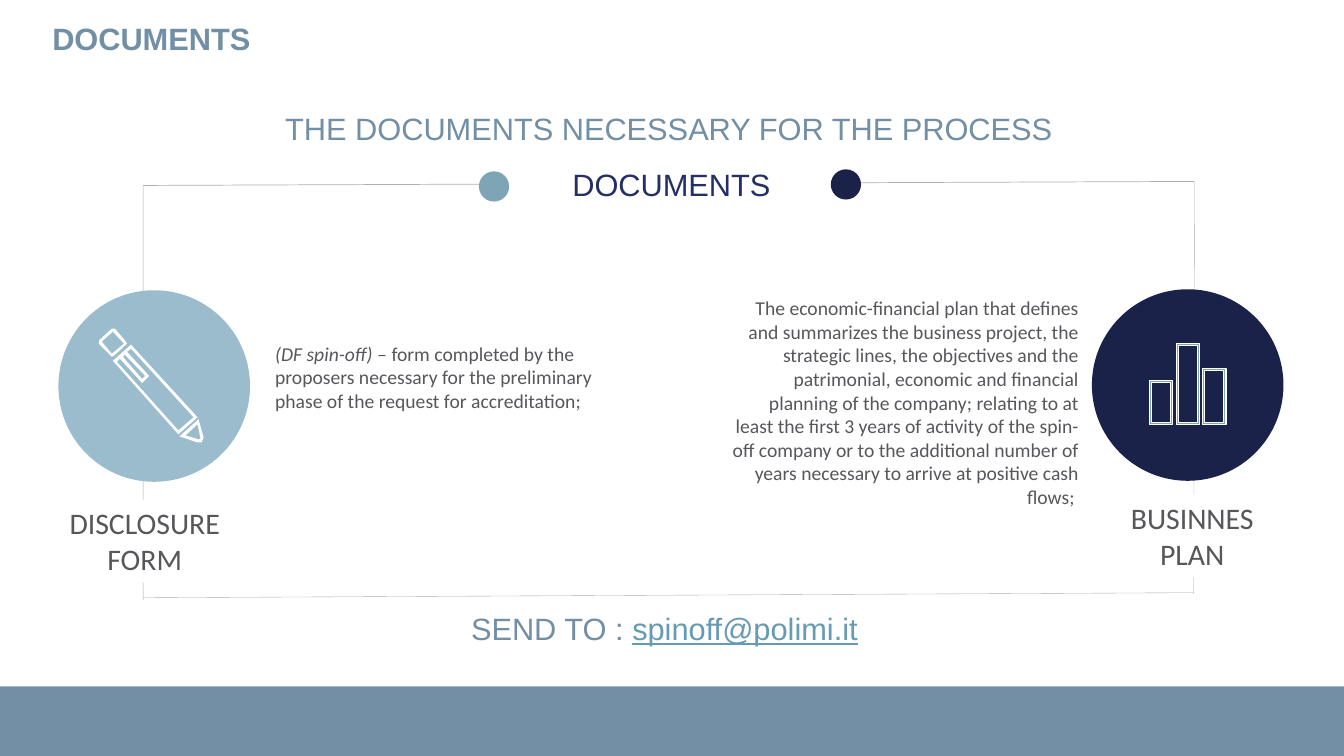
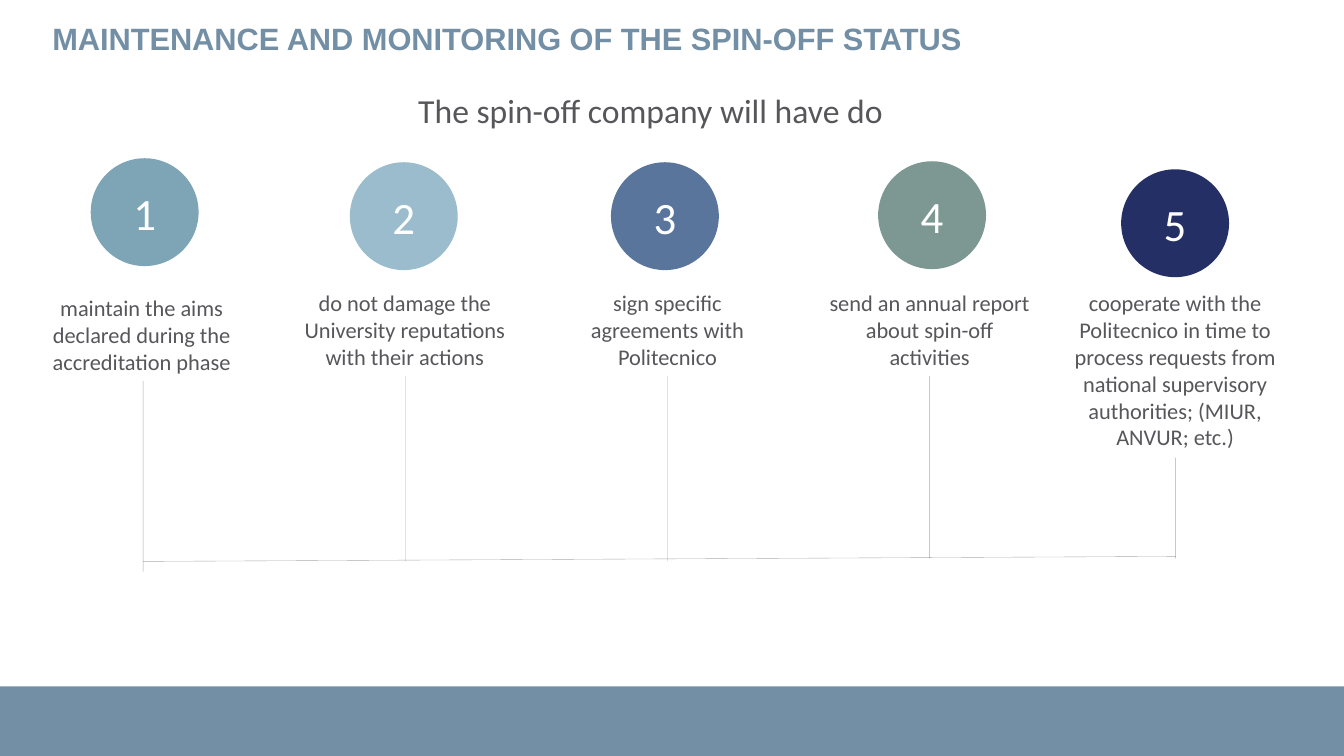
from typing import NamedTuple

from lxml import etree
from pptx import Presentation
from pptx import util as u
from pptx.dml.color import RGBColor
from pptx.enum import shapes, text as t
from pptx.oxml import ns

STEEL = RGBColor(0x72, 0x8F, 0xA5)
GREY = RGBColor(0x57, 0x56, 0x5A)
CHARCOAL = RGBColor(0x39, 0x38, 0x3A)
WHITE = RGBColor(0xFF, 0xFF, 0xFF)
SKY = RGBColor(0x9A, 0xBC, 0xCC)
TEAL = RGBColor(0x7D, 0xA5, 0xB6)
LINK = RGBColor(0x67, 0x9B, 0xB3)
DENIM = RGBColor(0x5A, 0x75, 0x9C)
SAGE = RGBColor(0x7D, 0x98, 0x92)
INDIGO = RGBColor(0x24, 0x2F, 0x65)
NAVY = RGBColor(0x1A, 0x22, 0x4A)

HEADING_FONT = "Arial"
BODY_FONT = "Calibri"
HEADING = {"font": HEADING_FONT, "size": 22, "color": STEEL}
LEFT, CENTER, RIGHT = t.PP_ALIGN.LEFT, t.PP_ALIGN.CENTER, t.PP_ALIGN.RIGHT
RECTANGLE = shapes.MSO_SHAPE.RECTANGLE
ELLIPSE = shapes.MSO_SHAPE.OVAL

PENCIL = [
    [(1.96, 4.39), (2.0, 4.39), (2.02, 4.34), (1.97, 4.16), (1.78, 4.33)],
    [(1.96, 4.21), (1.99, 4.35), (1.97, 4.36), (1.84, 4.32)],
    [(1.13, 3.26), (1.11, 3.26), (0.99, 3.37), (0.98, 3.39), (0.98, 3.41), (1.1, 3.53),
     (1.11, 3.54), (1.13, 3.53), (1.25, 3.42), (1.26, 3.41), (1.25, 3.39), (1.14, 3.26)],
    [(1.23, 3.41), (1.11, 3.51), (1.01, 3.39), (1.12, 3.29)],
    [(1.77, 4.31), (1.96, 4.14), (1.3, 3.42), (1.12, 3.58)],
    [(1.24, 3.52), (1.44, 3.73), (1.41, 3.76), (1.22, 3.54)],
    [(1.19, 3.56), (1.41, 3.8), (1.48, 3.73), (1.26, 3.49),
     (1.3, 3.46), (1.92, 4.14), (1.77, 4.27), (1.16, 3.59)],
]


class Step(NamedTuple):
    color: RGBColor
    circle: tuple
    label: tuple
    width: float
    lines: int
    stem: tuple
    text: str


STEPS = [
    Step(TEAL, (0.9, 1.57), (0.41, 2.87), 1.99, 3, (1.42, 5.67),
         "maintain the aims declared during the accreditation phase"),
    Step(SKY, (3.47, 1.61), (2.87, 2.82), 2.29, 3, (4.02, 5.57),
         "do not damage the University reputations with their actions"),
    Step(DENIM, (6.06, 1.61), (5.64, 2.82), 1.96, 3, (6.62, 5.57),
         "sign specific agreements with Politecnico"),
    Step(SAGE, (8.71, 1.6), (8.07, 2.82), 2.3, 3, (9.22, 5.54),
         "send an annual report about spin-off activities"),
    Step(INDIGO, (11.12, 1.68), (10.55, 2.82), 2.21, 6, (11.66, 5.54),
         "cooperate with the Politecnico in time to process requests from "
         "national supervisory authorities; (MIUR, ANVUR; etc.)"),
]


def add_span(para, text, *, font=BODY_FONT, size=14, color=GREY,
             bold=False, italic=False, underline=False):
    span = para.add_run()
    span.text = text
    span.font.name = font
    span.font.size = u.Pt(size)
    span.font.color.rgb = color
    span.font.bold = bold
    span.font.italic = italic
    span.font.underline = underline


def write(box, text, *, align=LEFT, anchor=t.MSO_ANCHOR.TOP, **style):
    frame = box.text_frame
    frame.word_wrap = True
    frame.vertical_anchor = anchor
    for index, line in enumerate(text.split("\n")):
        para = frame.add_paragraph() if index else frame.paragraphs[0]
        para.alignment = align
        add_span(para, line, **style)
    return para


def add_text(page, text, left, top, width, height, **style):
    box = page.shapes.add_textbox(*map(u.Inches, (left, top, width, height)))
    return write(box, text, **style)


def paint(shape, fill, line=None):
    shape.shadow.inherit = False
    shape.fill.solid()
    shape.fill.fore_color.rgb = fill
    if line is None:
        shape.line.fill.background()
    else:
        shape.line.color.rgb = line
        shape.line.width = u.Pt(0.75)


def add_block(page, kind, left, top, width, height, fill):
    shape = page.shapes.add_shape(kind, *map(u.Inches, (left, top, width, height)))
    paint(shape, fill)
    return shape


def add_circle(page, left, top, size, fill):
    return add_block(page, ELLIPSE, left, top, size, size, fill)


def add_label(page, text, left, top, width, height, **style):
    block = add_block(page, RECTANGLE, left, top, width, height, WHITE)
    write(block, text, align=CENTER, **style)


def add_line(page, start, end, color=GREY, width=0.25, opacity=50):
    line = page.shapes.add_connector(shapes.MSO_CONNECTOR.STRAIGHT,
                                     *map(u.Inches, (*start, *end)))
    line.line.color.rgb = color
    line.line.width = u.Pt(width)
    properties = line._element.spPr
    tint = properties.find(".//" + ns.qn("a:srgbClr"))
    etree.SubElement(tint, ns.qn("a:alpha"), val=str(opacity * 1000))
    etree.SubElement(properties, ns.qn("a:effectLst"))


def add_outline(page, contours, fill, line=None):
    builder = None
    for contour in contours:
        first, *others = [(u.Inches(x), u.Inches(y)) for x, y in contour]
        if builder is None:
            builder = page.shapes.build_freeform(*first)
        else:
            builder.move_to(*first)
        builder.add_line_segments(others, close=True)
    paint(builder.convert_to_shape(), fill, line)


def frame_contours(left, top, right, bottom, border):
    return [
        [(left + inset, top + inset), (right - inset, top + inset),
         (right - inset, bottom - inset), (left + inset, bottom - inset)]
        for inset in (0, border)
    ]


def add_bar_icon(page):
    contours = []
    for index, top in enumerate((3.78, 3.41, 3.66)):
        left = 11.4 + 0.265 * index
        contours += frame_contours(left, top, left + 0.23, 4.21, 0.02)
    add_outline(page, contours, TEAL, WHITE)


def add_page(deck, title):
    page = deck.slides.add_slide(deck.slide_layouts[6])
    add_block(page, RECTANGLE, 0, 6.81, 13.33, 0.69, STEEL)
    add_text(page, title, 0.42, 0.15, 12.51, 0.92, bold=True, **HEADING)
    return page


def build_documents(deck):
    page = add_page(deck, "DOCUMENTS")
    add_line(page, (11.84, 1.8), (1.42, 1.84), CHARCOAL, 0.5, 40)
    add_line(page, (1.42, 5.95), (1.42, 1.85))
    add_line(page, (1.42, 5.93), (11.84, 5.88))
    add_line(page, (11.84, 5.89), (11.85, 1.8))

    for text, left, top in (("DISCLOSURE\nFORM", 0.44, 4.96), ("BUSINNES\nPLAN", 10.83, 4.91)):
        add_label(page, text, left, top, 1.99, 0.82, size=21.3)
    add_label(page, "DOCUMENTS", 4.91, 1.59, 3.5, 0.47,
              font=HEADING_FONT, size=22, color=INDIGO)

    add_circle(page, 0.58, 2.88, 1.9, SKY)
    add_circle(page, 10.83, 2.87, 1.9, NAVY)
    add_circle(page, 4.75, 1.7, 0.3, TEAL)
    add_circle(page, 8.24, 1.68, 0.3, NAVY)
    add_outline(page, PENCIL, WHITE)
    add_bar_icon(page)

    add_text(page, "THE DOCUMENTS NECESSARY FOR THE PROCESS", 2.73, 1.04, 8, 0.47, **HEADING)
    para = add_text(page, "(DF spin-off) – ", 2.63, 3.34, 3.51, 0.8, italic=True)
    add_span(para, "form completed by the proposers necessary for the preliminary "
                   "phase of the request for accreditation;")
    add_text(page, "The economic-financial plan that defines and summarizes the business "
                   "project, the strategic lines, the objectives and the patrimonial, economic "
                   "and financial planning of the company; relating to at least the first 3 "
                   "years of activity of the spin-off company or to the additional number of "
                   "years necessary to arrive at positive cash flows; ",
             7.12, 2.89, 3.68, 2.22, align=RIGHT)
    para = add_text(page, "SEND TO : ", 0.52, 6, 12.14, 0.5, align=CENTER, **HEADING)
    add_span(para, "spinoff@polimi.it", font=HEADING_FONT, size=22, color=LINK, underline=True)


def add_step(page, number, step):
    circle = add_circle(page, *step.circle, 1.07, step.color)
    write(circle, str(number), align=CENTER, anchor=t.MSO_ANCHOR.MIDDLE, size=32, color=WHITE)
    left, top = step.label
    height = 0.1 + 0.27 * step.lines
    add_text(page, step.text, left, top, step.width, height, align=CENTER, size=16)
    add_line(page, step.stem, (step.stem[0], top + height))


def build_monitoring(deck):
    page = add_page(deck, "MAINTENANCE AND MONITORING OF THE SPIN-OFF STATUS")
    add_text(page, "The spin-off company will have do", 4.05, 0.84, 6.67, 0.5, size=24)
    add_line(page, (1.42, 5.57), (11.66, 5.52))
    for number, step in enumerate(STEPS, 1):
        add_step(page, number, step)


def main():
    deck = Presentation()
    deck.slide_width = u.Inches(13.33)
    deck.slide_height = u.Inches(7.5)
    build_documents(deck)
    build_monitoring(deck)
    deck.save("out.pptx")


if __name__ == "__main__":
    main()
